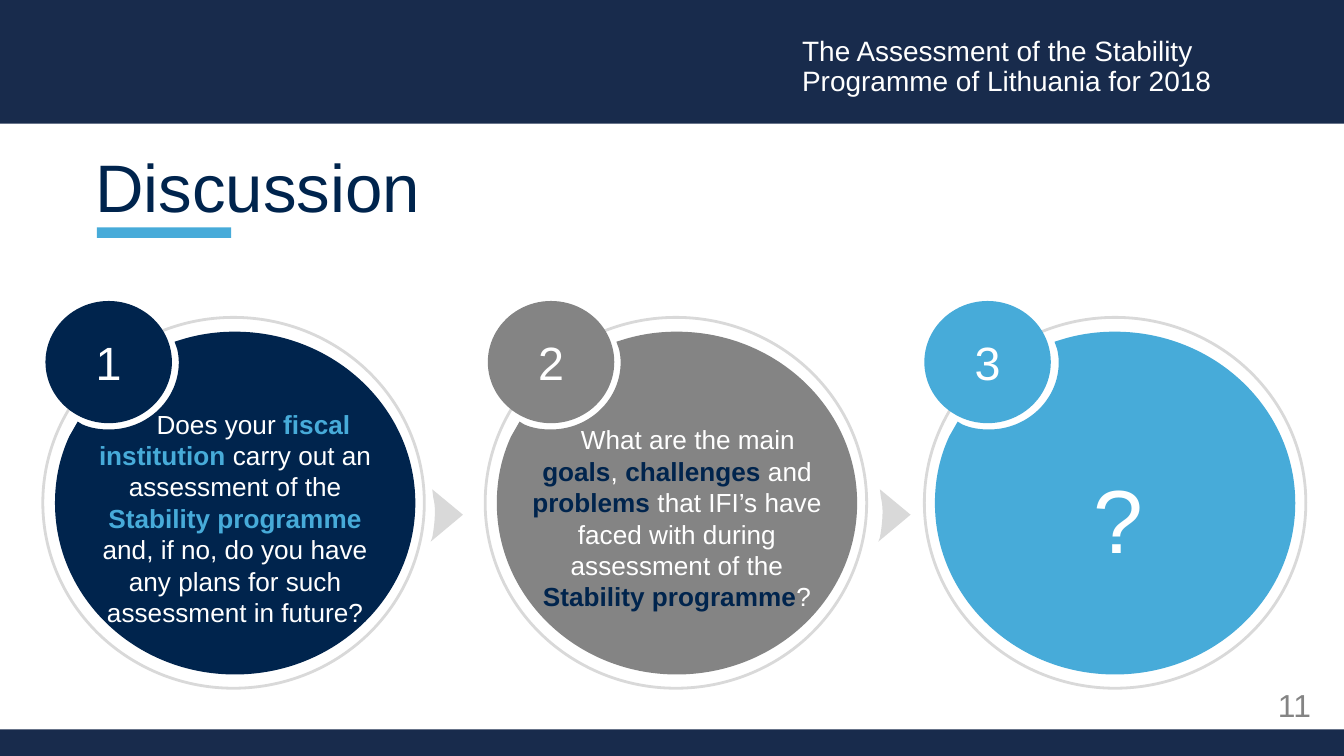
from lxml.etree import SubElement as Sub

from pptx import Presentation
from pptx.dml.color import RGBColor as Rgb
from pptx.enum.shapes import MSO_SHAPE as Kind
from pptx.enum.text import MSO_ANCHOR as Anchor, MSO_AUTO_SIZE as Fit, PP_ALIGN as Align
from pptx.oxml.ns import qn
from pptx.util import Cm, Pt

NAVY, GRAY, SKY = "00244D", "848484", "47ABD9"
BAND, PALE, WHITE = "182B4C", "D9D9D9", "FFFFFF"

# Outlines in cm from the top left: one point is a line, three are a curve
DISC = [
    [(3.4, 0)],
    [(5.28, 0), (6.81, 1.45), (6.81, 3.24)],
    [(6.81, 5.03), (5.28, 6.48), (3.4, 6.48)],
    [(1.52, 6.48), (0, 5.03), (0, 3.24)],
    [(0, 2.79), (0.09, 2.37), (0.27, 1.98)],
    [(0.43, 1.7)],
    [(0.51, 1.75)],
    [(0.66, 1.82), (0.84, 1.85), (1.02, 1.85)],
    [(1.75, 1.85), (2.34, 1.28), (2.34, 0.58)],
    [(2.34, 0.5), (2.33, 0.42), (2.31, 0.33)],
    [(2.26, 0.19)],
    [(2.39, 0.15)],
    [(2.71, 0.05), (3.05, 0), (3.4, 0)],
]
ARROW = [
    [(0.03, 0)], [(0.61, 0.48)], [(0, 0.99)], [(0.03, 0.91)],
    [(0.06, 0.75), (0.08, 0.58), (0.08, 0.41)],
    [(0.08, 0.33), (0.07, 0.24), (0.05, 0.16)],
]

# Left of ring, disc and badge, colour, accent, size, indent, (text, is accent)
TOPICS = [
    ((0.81, 1.04, 0.86), NAVY, SKY, 14, 19.5, [
        ("Does your ", False), ("fiscal institution ", True),
        ("carry out an assessment of the ", False),
        ("Stability programme", True),
        (" and, if no, do you have any plans for such assessment in future?", False)]),
    ((9.17, 9.39, 9.22), GRAY, NAVY, 14, 11.7, [
        ("What are the main ", False), ("goals", True), (", ", False),
        ("challenges", True), (" and ", False), ("problems", True),
        (" that IFI’s have faced with during assessment of the ", False),
        ("Stability programme", True), ("?", False)]),
    ((17.47, 17.67, 17.47), SKY, WHITE, 48, 4, [("?", False)]),
]


def paint(fmt, color):
    fmt.solid()
    fmt.fore_color.rgb = Rgb.from_string(color)


def style(shape, fill=None, line=None):
    shape.shadow.inherit = False
    if fill:
        paint(shape.fill, fill)
    else:
        shape.fill.background()
    if line:
        paint(shape.line.fill, line)
        shape.line.width = Pt(1.5)
    else:
        shape.line.fill.background()


def add_run(para, text, size, color, bold=False):
    run = para.add_run()
    run.text = text
    font = run.font
    font.name, font.size, font.bold = "Arial", Pt(size), bold
    paint(font.fill, color)


def set_frame(shape, pad, anchor=Anchor.MIDDLE, align=Align.CENTER, wrap=True):
    frame = shape.text_frame
    frame.auto_size = Fit.NONE
    frame.word_wrap = wrap
    frame.vertical_anchor = anchor
    (frame.margin_left, frame.margin_top,
     frame.margin_right, frame.margin_bottom) = [Cm(side) for side in pad]
    para = frame.paragraphs[0]
    para.alignment = align
    return para


def add_shape(slide, kind, box, fill=None, line=None):
    shape = slide.shapes.add_shape(kind, *[Cm(n) for n in box])
    style(shape, fill, line)
    return shape


def add_text(slide, box):
    return slide.shapes.add_textbox(*[Cm(n) for n in box])


def add_outline(slide, left, top, steps, fill):
    ends = [(Cm(left + x), Cm(top + y)) for x, y in [step[-1] for step in steps]]
    pen = slide.shapes.build_freeform(*ends[0], scale=1.0)
    pen.add_line_segments(ends[1:], close=True)
    shape = pen.convert_to_shape()
    style(shape, fill)
    # Turn the lines that have control points into curves
    lines = list(shape._element.iter(qn("a:lnTo")))
    for line, step in zip(lines, steps[1:]):
        if len(step) == 3:
            line.tag = qn("a:cubicBezTo")
            end = line[0]
            for x, y in step[:2]:
                Sub(line, qn("a:pt"), x=str(Cm(x)), y=str(Cm(y)))
            line.append(end)
    return shape


def add_topic(slide, num, topic):
    (ring, disc, spot), color, accent, size, indent, parts = topic
    add_shape(slide, Kind.OVAL, (ring, 6, 7.21, 7.01), line=PALE)

    # Disc with a round notch for the badge
    body = add_outline(slide, disc, 6.27, DISC, color)
    para = set_frame(body, (0.53, 1.32, 0.53, 0.76))
    para._p.get_or_add_pPr().set("indent", str(Pt(indent)))
    for text, strong in parts:
        add_run(para, text, size, accent if strong else WHITE, strong)

    # Number badge
    badge = add_shape(slide, Kind.OVAL, (spot, 5.69, 2.39, 2.31), color)
    add_run(set_frame(badge, (0.2, 0.1, 0.2, 0.1)), str(num), 25, WHITE)


def main():
    deck = Presentation()
    deck.slide_width, deck.slide_height = Cm(25.4), Cm(14.29)
    slide = deck.slides.add_slide(deck.slide_layouts[5])

    # Bands and page number
    add_shape(slide, Kind.RECTANGLE, (0, 0, 25.4, 2.34), BAND)
    add_shape(slide, Kind.RECTANGLE, (0, 13.79, 25.4, 0.5), BAND)
    page = add_text(slide, (23.83, 12.95, 1.27, 0.74))
    add_run(set_frame(page, (0, 0, 0, 0)), "11", 17, GRAY)

    # Header
    head = add_text(slide, (14.91, 0.58, 10.16, 1.3))
    para = set_frame(head, (0.25, 0.13, 0.25, 0.13), Anchor.TOP, Align.LEFT)
    para.line_spacing = 0.9
    add_run(para, "The Assessment of the Stability Programme of Lithuania for 2018",
            15, WHITE)

    # Title and its bar
    title = slide.shapes.title
    title.left, title.top, title.width, title.height = [
        Cm(n) for n in (1.55, 2.79, 6.71, 1.65)]
    para = set_frame(title, (0.25, 0.13, 0.25, 0.13), Anchor.TOP, Align.LEFT, False)
    para.line_spacing = 0.9
    add_run(para, "Discussion", 36, NAVY)
    add_shape(slide, Kind.RECTANGLE, (1.83, 4.3, 2.54, 0.2), SKY)

    # Circles and the arrows between them
    for num, topic in enumerate(TOPICS, 1):
        add_topic(slide, num, topic)
    for left in (8.14, 16.6):
        add_outline(slide, left, 9.25, ARROW, PALE)

    deck.save("out.pptx")


if __name__ == "__main__":
    main()
